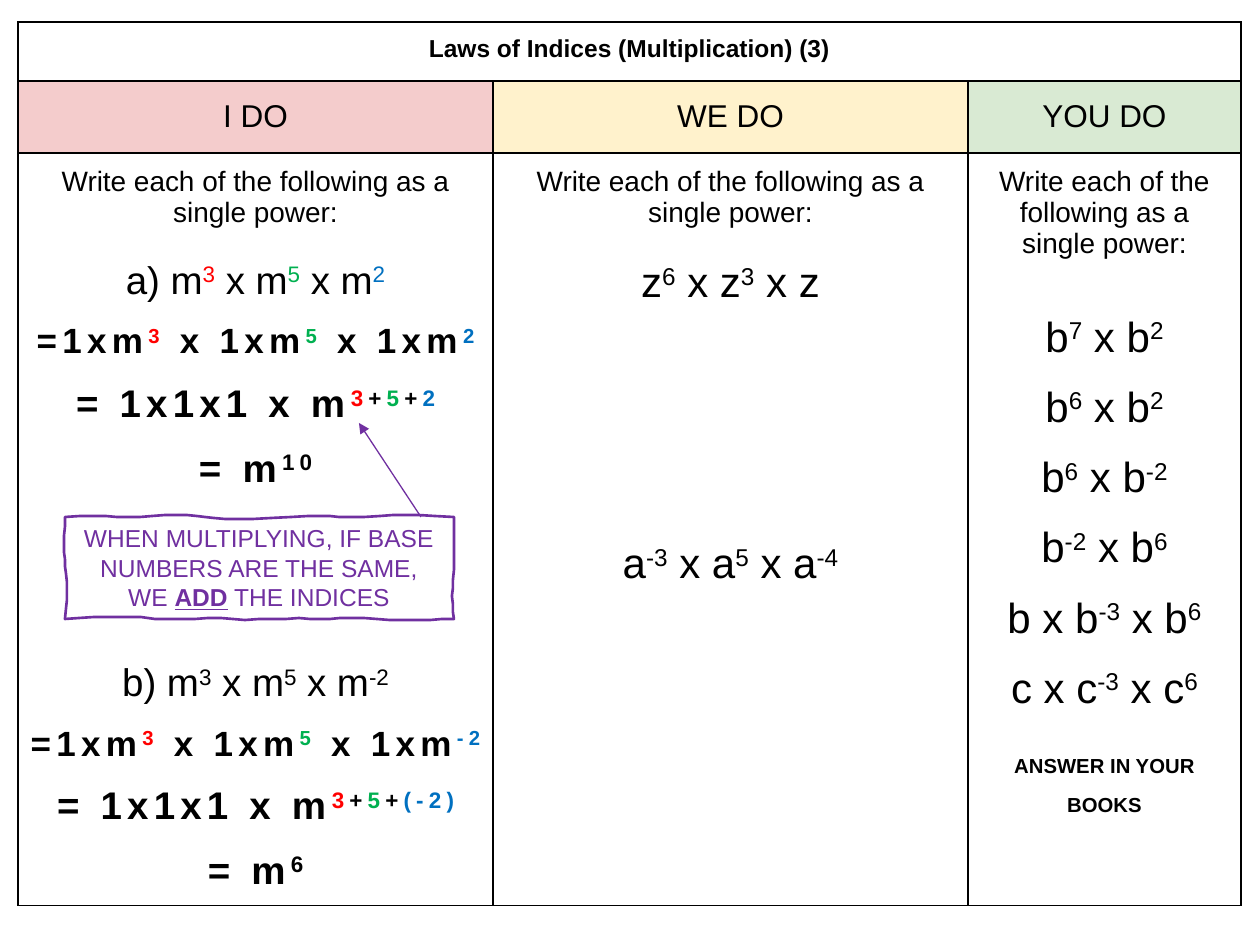
from pptx import Presentation
from pptx.dml.color import RGBColor
from pptx.enum.shapes import MSO_CONNECTOR
from pptx.enum.text import MSO_ANCHOR, PP_ALIGN
from pptx.oxml.ns import qn
from pptx.util import Pt
from lxml import etree

PX = 914400 // 126
FONT = "Arial"
CENTER = PP_ALIGN.CENTER
TOP, MIDDLE = MSO_ANCHOR.TOP, MSO_ANCHOR.MIDDLE
STRAIGHT = MSO_CONNECTOR.STRAIGHT

BLACK = RGBColor(0x00, 0x00, 0x00)
RED = RGBColor(0xFF, 0x00, 0x00)
GREEN = RGBColor(0x00, 0xB0, 0x50)
BLUE = RGBColor(0x00, 0x70, 0xC0)
PURPLE = RGBColor(0x70, 0x30, 0xA0)
PINK = RGBColor(0xF4, 0xCC, 0xCC)
CREAM = RGBColor(0xFF, 0xF2, 0xCC)
MINT = RGBColor(0xD9, 0xEA, 0xD3)
POWER_COLORS = (RED, GREEN, BLUE)

TITLE = "Laws of Indices (Multiplication) (3)"
HEADERS = (("I DO", PINK), ("WE DO", CREAM), ("YOU DO", MINT))
PROMPT = "Write each of the following as a single power:"
PRACTICE = ("b|7| x b|2", "b|6| x b|2", "b|6| x b|-2", "b|-2| x b|6",
            "b x b|-3| x b|6", "c x c|-3| x c|6")
COL_WIDTHS = (475, 475, 273)
ROW_HEIGHTS = (59, 72, 753)

# Wavy frame: each row is two control points and an end point of a curve.
FRAME_START = (65, 517)
FRAME_CURVES = (
    ((98, 514), (115, 518), (140, 517)),
    ((165, 515), (190, 514), (205, 517)),
    ((220, 520), (249, 519), (291, 517)),
    ((331, 514), (330, 518), (364, 517)),
    ((399, 515), (411, 514), (454, 517)),
    ((454, 540), (455, 549), (454, 570)),
    ((452, 590), (452, 604), (454, 619)),
    ((431, 620), (403, 621), (377, 619)),
    ((349, 616), (330, 620), (310, 619)),
    ((291, 617), (255, 621), (233, 619)),
    ((210, 616), (180, 621), (155, 619)),
    ((130, 615), (91, 617), (65, 619)),
    ((67, 600), (68, 580), (65, 566)),
    ((64, 552), (64, 539), (65, 517)),
)


def add_run(p, text, size, color=BLACK, bold=False, raised=False, spacing=0):
    r = p.add_run()
    r.text = text
    r.font.name = FONT
    r.font.size = Pt(size)
    r.font.bold = bold
    r.font.color.rgb = color
    rPr = r.font._element
    if raised:
        rPr.set("baseline", "30000")
    if spacing:
        rPr.set("spc", str(spacing * 100))
    return r


def add_line(tf, text, size, gap=0, line=1.0, colored=False, **style):
    """Add a centred paragraph; every second part between bars is raised."""
    p = tf.paragraphs[0]
    if p.runs:
        p = tf.add_paragraph()
    p.alignment = CENTER
    p.line_spacing = line
    p.space_before = Pt(gap)
    colors = iter(POWER_COLORS)
    for i, part in enumerate(text.split("|")):
        raised = i % 2 == 1
        if raised and colored:
            for j, term in enumerate(part.split("+")):
                if j:
                    add_run(p, "+", size, raised=True, **style)
                add_run(p, term, size, next(colors), raised=True, **style)
        elif part:
            add_run(p, part, size, raised=raised, **style)


def add_worked_example(tf, label, powers, total, gap, colored):
    bold = {"line": 1.5, "bold": True, "spacing": 3}
    question = "| x ".join(f"m|{n}" for n in powers)
    expanded = "| x ".join(f"1xm|{n}" for n in powers)
    powers_sum = "+".join(f"({n})" if n.startswith("-") else n for n in powers)
    add_line(tf, f"{label}) {question}", 22, gap=gap, colored=colored)
    add_line(tf, f"={expanded}", 20, colored=True, **bold)
    add_line(tf, f"= 1x1x1 x m|{powers_sum}", 22, colored=True, **bold)
    add_line(tf, f"= m|{total}", 22, **bold)


def format_cell(cell, fill=None, anchor=TOP):
    cell.vertical_anchor = anchor
    cell.margin_left = cell.margin_right = 8 * PX
    cell.margin_top = cell.margin_bottom = 13 * PX
    tcPr = cell._tc.get_or_add_tcPr()
    for side in ("a:lnL", "a:lnR", "a:lnT", "a:lnB"):
        ln = etree.SubElement(tcPr, qn(side), w=str(Pt(0.75)))
        solid = etree.SubElement(ln, qn("a:solidFill"))
        etree.SubElement(solid, qn("a:srgbClr"), val=str(BLACK))
    if fill is None:
        cell.fill.background()
    else:
        cell.fill.solid()
        cell.fill.fore_color.rgb = fill


def add_lesson_table(slide):
    frame = slide.shapes.add_table(3, 3, 18 * PX, 22 * PX,
                                   sum(COL_WIDTHS) * PX, sum(ROW_HEIGHTS) * PX)
    table = frame.table
    table.first_row = table.horz_banding = False
    for col, width in zip(table.columns, COL_WIDTHS):
        col.width = width * PX
    for row, height in zip(table.rows, ROW_HEIGHTS):
        row.height = height * PX

    for c, (name, fill) in enumerate(HEADERS):
        format_cell(table.cell(0, c))
        format_cell(table.cell(1, c), fill, MIDDLE)
        format_cell(table.cell(2, c))
        add_line(table.cell(1, c).text_frame, name, 18)
        add_line(table.cell(2, c).text_frame, PROMPT, 16)
    table.cell(0, 0).merge(table.cell(0, 2))
    add_line(table.cell(0, 0).text_frame, TITLE, 14, bold=True)

    i_do, we_do, you_do = (table.cell(2, c).text_frame for c in range(3))
    # The prompts keep to two and three lines inside narrower margins.
    for c in (1, 2):
        cell = table.cell(2, c)
        cell.margin_left = cell.margin_right = 13 * PX
    add_worked_example(i_do, "a", ("3", "5", "2"), 10, 18, True)
    add_worked_example(i_do, "b", ("3", "5", "-2"), 6, 98, False)
    add_line(we_do, "z|6| x z|3| x z", 24, gap=18)
    add_line(we_do, "a|-3| x a|5| x a|-4", 24, gap=134)
    for i, question in enumerate(PRACTICE):
        add_line(you_do, question, 24, gap=0 if i else 18, line=1.5)
    add_line(you_do, "|ANSWER IN YOUR BOOKS", 20, gap=23, bold=True)


def curve_points(start, curves, steps=6):
    """Sample a chain of cubic curves."""
    points = []
    for a, b, end in curves:
        for k in range(1, steps + 1):
            t = k / steps
            u = 1 - t
            points.append(tuple(
                u**3 * p0 + 3 * u * u * t * p1 + 3 * u * t * t * p2 + t**3 * p3
                for p0, p1, p2, p3 in zip(start, a, b, end)))
        start = end
    return points


def add_rule_box(slide):
    builder = slide.shapes.build_freeform(*FRAME_START, scale=PX)
    builder.add_line_segments(curve_points(FRAME_START, FRAME_CURVES), close=True)
    sp = builder.convert_to_shape()
    sp.shadow.inherit = False
    sp.fill.background()
    sp.line.color.rgb = PURPLE
    sp.line.width = Pt(1.5)
    tf = sp.text_frame
    tf.word_wrap = True
    tf.margin_left = tf.margin_right = 17 * PX
    tf.vertical_anchor = MIDDLE
    p = tf.paragraphs[0]
    p.alignment = CENTER
    add_run(p, "WHEN MULTIPLYING, IF BASE NUMBERS ARE THE SAME, WE ", 14, PURPLE)
    add_run(p, "ADD", 14, PURPLE, bold=True).font.underline = True
    add_run(p, " THE INDICES", 14, PURPLE)
    return sp


def add_arrow(slide, x1, y1, x2, y2):
    line = slide.shapes.add_connector(STRAIGHT, x1 * PX, y1 * PX, x2 * PX, y2 * PX)
    line.line.color.rgb = PURPLE
    line.line.width = Pt(0.75)
    etree.SubElement(line.line._get_or_add_ln(), qn("a:tailEnd"), type="triangle")
    etree.SubElement(line._element.spPr, qn("a:effectLst"))
    return line


def main():
    prs = Presentation()
    prs.slide_width, prs.slide_height = 1260 * PX, 945 * PX
    slide = prs.slides.add_slide(prs.slide_layouts[6])
    add_lesson_table(slide)
    box = add_rule_box(slide)
    arrow = add_arrow(slide, 421, 517, 359, 423)
    slide.shapes.add_group_shape([box, arrow])
    prs.save("out.pptx")


if __name__ == "__main__":
    main()
